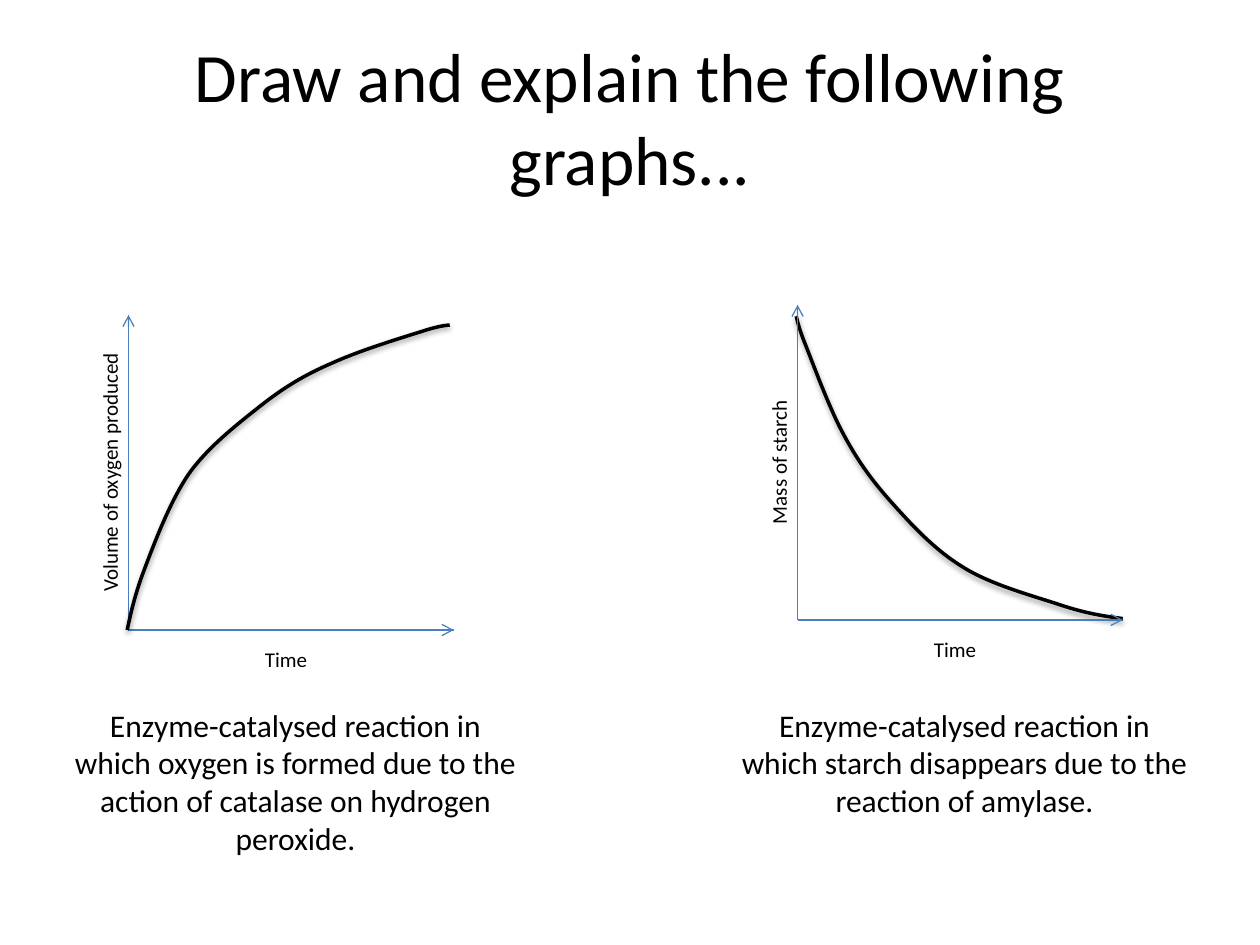
from lxml import etree
from pptx import Presentation
from pptx import util as u
from pptx.dml.color import RGBColor
from pptx.enum import shapes, text
from pptx.oxml.ns import qn

FONT = "Calibri"
INK = "000000"
AXIS = "4B7EBC"
AXIS_WIDTH, AXIS_HEIGHT = 2.58, 2.5

OXYGEN_CURVE = [
    (-0.01, 0), (0.02, 0.14), (0.05, 0.28), (0.13, 0.49), (0.21, 0.7),
    (0.33, 1.02), (0.48, 1.24), (0.63, 1.45), (0.86, 1.63), (1.05, 1.78),
    (1.24, 1.93), (1.41, 2.03), (1.62, 2.12), (1.84, 2.22), (2.17, 2.32),
    (2.33, 2.37), (2.48, 2.42), (2.55, 2.42), (2.55, 2.42),
]
STARCH_CURVE = [
    (2.58, 0.01), (2.43, 0.03), (2.29, 0.05), (2.08, 0.12), (1.87, 0.19),
    (1.53, 0.28), (1.31, 0.42), (1.08, 0.56), (0.89, 0.77), (0.73, 0.95),
    (0.57, 1.13), (0.46, 1.29), (0.35, 1.5), (0.24, 1.71), (0.12, 2.04),
    (0.06, 2.19), (0, 2.34), (-0.01, 2.41), (-0.01, 2.41),
]


def colour(value):
    return RGBColor.from_string(value)


def fill_text(frame, words, size):
    frame.word_wrap = True
    para = frame.paragraphs[0]
    para.alignment = text.PP_ALIGN.CENTER
    span = para.add_run()
    span.text = words
    span.font.name = FONT
    span.font.size = u.Pt(size)
    span.font.color.rgb = colour(INK)


def add_title(slide, words, left, top, width, height):
    title = slide.shapes.title
    title.left, title.top = u.Inches(left), u.Inches(top)
    title.width, title.height = u.Inches(width), u.Inches(height)
    fill_text(title.text_frame, words, 39.6)
    title.text_frame.auto_size = text.MSO_AUTO_SIZE.NONE
    title.text_frame.vertical_anchor = text.MSO_ANCHOR.MIDDLE


def add_label(slide, words, size, left, top, width, height, rotation=0):
    box = slide.shapes.add_textbox(
        u.Inches(left), u.Inches(top), u.Inches(width), u.Inches(height))
    box.rotation = rotation
    fill_text(box.text_frame, words, size)
    box.text_frame.auto_size = text.MSO_AUTO_SIZE.SHAPE_TO_FIT_TEXT


def add_axis(slide, start, end, arrow=False):
    axis = slide.shapes.add_connector(
        shapes.MSO_CONNECTOR.STRAIGHT, *map(u.Inches, start + end))
    axis.line.color.rgb = colour(AXIS)
    axis.line.width = u.Pt(0.75)
    properties = axis._element.spPr
    if arrow:
        etree.SubElement(properties.find(qn("a:ln")), qn("a:tailEnd"),
                         type="arrow")
    etree.SubElement(properties, qn("a:effectLst"))


def bend_lines(outline):
    lines = outline.findall(qn("a:lnTo"))
    for first in range(0, len(lines), 3):
        bend = etree.SubElement(outline, qn("a:cubicBezTo"))
        for line in lines[first:first + 3]:
            bend.append(line[0])
            outline.remove(line)


def add_curve(slide, left, base, controls):
    points = [(u.Inches(left + x), u.Inches(base - y)) for x, y in controls]
    builder = slide.shapes.build_freeform(*points[0])
    builder.add_line_segments(points[1:], close=False)
    curve = builder.convert_to_shape()
    curve.fill.background()
    curve.line.color.rgb = colour(INK)
    curve.line.width = u.Pt(2)
    curve.shadow.inherit = False
    properties = curve._element.spPr
    bend_lines(next(properties.iter(qn("a:path"))))
    shadow = etree.SubElement(
        properties.find(qn("a:effectLst")), qn("a:outerShdw"),
        blurRad=str(u.Pt(3.1)), dist=str(u.Pt(1.6)), dir="5400000",
        rotWithShape="0")
    tint = etree.SubElement(shadow, qn("a:srgbClr"), val=INK)
    etree.SubElement(tint, qn("a:alpha"), val="38000")


def add_graph(slide, left, top, y_label, controls):
    base = top + AXIS_HEIGHT
    right = left + AXIS_WIDTH
    label_width, label_height = 2.66, 0.3
    add_axis(slide, (left, top), (left, base))
    add_axis(slide, (left, base), (right, base))
    add_curve(slide, left, base, controls)
    add_axis(slide, (left, base - 0.7), (left, top), arrow=True)
    add_axis(slide, (left + 0.39, base), (right, base), arrow=True)
    add_label(slide, y_label, 12, left - 0.15 - label_width / 2,
              top + (AXIS_HEIGHT - label_height) / 2,
              label_width, label_height, 270)
    add_label(slide, "Time", 12, left - 0.08, base + 0.08,
              label_width, label_height)


def main():
    deck = Presentation()
    deck.slide_width, deck.slide_height = u.Inches(10), u.Inches(7.5)
    slide = deck.slides.add_slide(deck.slide_layouts.get_by_name("Title Only"))
    add_title(slide, "Draw and explain the following graphs...",
              0.5, 0.3, 9, 1.25)
    graphs = [
        (1.02, 2.5, "Volume of oxygen produced", OXYGEN_CURVE, 1.31,
         "Enzyme-catalysed reaction in which oxygen is formed due to the "
         "action of catalase on hydrogen peroxide."),
        (6.33, 2.42, "Mass of starch", STARCH_CURVE, 1.01,
         "Enzyme-catalysed reaction in which starch disappears due to the "
         "reaction of amylase."),
    ]
    for left, top, y_label, controls, caption_height, caption in graphs:
        add_graph(slide, left, top, y_label, controls)
        add_label(slide, caption, 18, left - 0.55, 5.55, 3.75, caption_height)
    deck.save("out.pptx")


if __name__ == "__main__":
    main()
